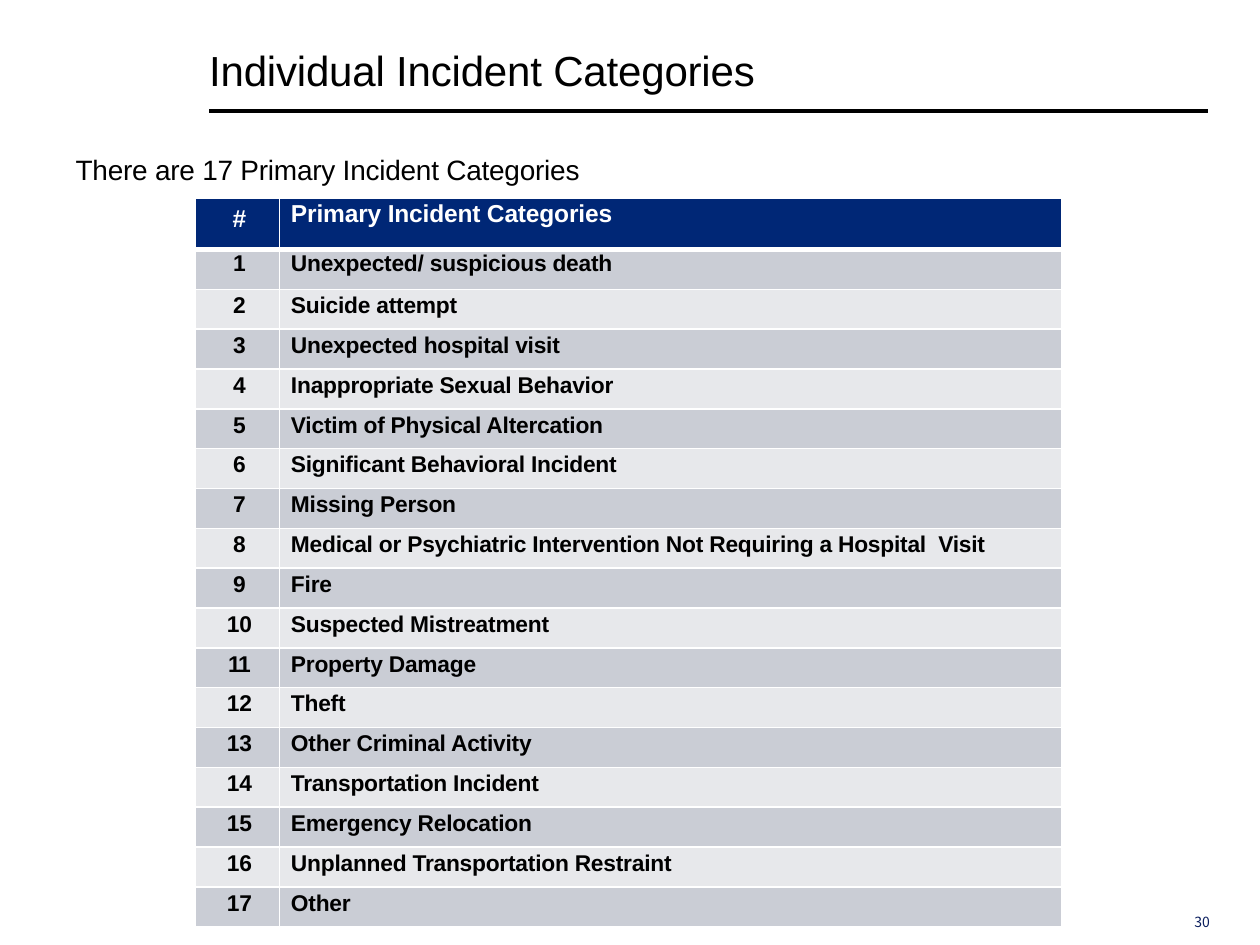
import pptx
import pptx.dml.color
import pptx.enum.text
import pptx.oxml
import pptx.oxml.ns
import pptx.util
from lxml import etree
from pptx.util import Inches

ALIGN = pptx.enum.text.PP_ALIGN
ANCHOR = pptx.enum.text.MSO_ANCHOR
BLACK, WHITE, NAVY = "000000", "FFFFFF", "002776"
BANDS = ["CACDD5", "E7E8EB"]

CATEGORIES = [
    "Unexpected/ suspicious death",
    "Suicide attempt",
    "Unexpected hospital visit",
    "Inappropriate Sexual Behavior",
    "Victim of Physical Altercation",
    "Significant Behavioral Incident",
    "Missing Person",
    "Medical or Psychiatric Intervention Not Requiring a Hospital  Visit",
    "Fire",
    "Suspected Mistreatment",
    "Property Damage",
    "Theft",
    "Other Criminal Activity",
    "Transportation Incident",
    "Emergency Relocation",
    "Unplanned Transportation Restraint",
    "Other",
]


def color(hex_value):
    return pptx.dml.color.RGBColor.from_string(hex_value)


def write(frame, text, size, hex_value, font="Arial", bold=False,
          align=ALIGN.LEFT, spacing=0):
    """Fill a text frame; spacing is in points between letters."""
    paragraph = frame.paragraphs[0]
    run = paragraph.add_run()
    run.text = text
    paragraph.alignment = align
    paragraph.font.size = pptx.util.Pt(size)
    paragraph.font.name = font
    paragraph.font.bold = bold
    paragraph.font.color.rgb = color(hex_value)
    if spacing:
        run.font._element.set("spc", str(round(spacing * 100)))
    return paragraph


def clear_margins(frame, left=0):
    frame.margin_left = Inches(left)
    frame.margin_top = frame.margin_right = frame.margin_bottom = 0
    frame.vertical_anchor = ANCHOR.TOP
    frame.word_wrap = True
    frame.auto_size = pptx.enum.text.MSO_AUTO_SIZE.NONE


def add_label(slide, left, top, width, height, indent=0.01):
    label = slide.shapes.add_textbox(
        Inches(left), Inches(top), Inches(width), Inches(height))
    clear_margins(label.text_frame, indent)
    return label.text_frame


def add_heading(slide, left, top, width, height):
    # Title placeholder
    title = slide.shapes.title
    title.left, title.top = Inches(left), Inches(top)
    title.width, title.height = Inches(width), Inches(height)
    clear_margins(title.text_frame, 0.01)
    write(title.text_frame, "Individual Incident Categories", 24, BLACK,
          spacing=-0.1)

    # Rule below the title
    rule_y = Inches(0.88)
    rule = slide.shapes.add_connector(
        pptx.enum.shapes.MSO_CONNECTOR.STRAIGHT,
        Inches(1.66), rule_y, Inches(9.59), rule_y)
    rule.line.color.rgb = color(BLACK)
    rule.line.width = pptx.util.Pt(2.04)
    etree.SubElement(rule._element.spPr, pptx.oxml.ns.qn("a:effectLst"))


def set_borders(cell, top=1, bottom=1):
    """White borders, widths in points; they come before the fill."""
    widths = {"lnL": 1, "lnR": 1, "lnT": top, "lnB": bottom}
    for position, (side, width) in enumerate(widths.items()):
        border = pptx.oxml.parse_xml(
            f'<a:{side} {pptx.oxml.ns.nsdecls("a")} w="{width * 12700}">'
            f'<a:solidFill><a:srgbClr val="{WHITE}"/></a:solidFill></a:{side}>')
        cell._tc.get_or_add_tcPr().insert(position, border)


def fill_cell(cell, text, size, text_color, fill, margin_top, is_number, spacing):
    cell.margin_left = Inches(0.03 if is_number else 0.09)
    cell.margin_top = Inches(margin_top)
    cell.margin_right = cell.margin_bottom = 0
    cell.vertical_anchor = ANCHOR.TOP
    cell.fill.solid()
    cell.fill.fore_color.rgb = color(fill)
    return write(cell.text_frame, text, size, text_color, bold=True,
                 align=ALIGN.CENTER if is_number else ALIGN.LEFT,
                 spacing=spacing)


def add_category_table(slide, left, top, width, height):
    header_height, number_width = 0.41, 0.67
    table = slide.shapes.add_table(
        len(CATEGORIES) + 1, 2, Inches(left), Inches(top),
        Inches(width), Inches(height)).table
    table.horz_banding = False
    table.columns[0].width = Inches(number_width)
    table.columns[1].width = Inches(width - number_width)

    # Header row
    table.rows[0].height = Inches(header_height)
    headers = [("#", 0.06), ("Primary Incident Categories", 0.02)]
    for column, (text, margin_top) in enumerate(headers):
        cell = table.cell(0, column)
        fill_cell(cell, text, 14, WHITE, NAVY, margin_top, column == 0,
                  -0.1 * column)
        set_borders(cell, bottom=3)

    # Numbered category rows
    row_height = Inches((height - header_height) / len(CATEGORIES))
    for number, category in enumerate(CATEGORIES, start=1):
        table.rows[number].height = row_height
        first = number == 1
        number_spacing = -0.8 if number == 11 else 0
        entries = [(str(number), number_spacing), (category, -0.1)]
        for column, (text, spacing) in enumerate(entries):
            cell = table.cell(number, column)
            paragraph = fill_cell(
                cell, text, 13, BLACK, BANDS[(number - 1) % 2],
                0 if first else 0.03, column == 0, spacing)
            if first:
                paragraph.line_spacing = pptx.util.Pt(15.4)
            set_borders(cell, top=3 if first else 1)


def main():
    deck = pptx.Presentation()
    deck.slide_width, deck.slide_height = Inches(10), Inches(7.5)
    slide = deck.slides.add_slide(deck.slide_layouts.get_by_name("Title Only"))

    add_heading(slide, 1.65, 0.35, 4.39, 0.42)
    write(add_label(slide, 0.59, 1.21, 4.09, 0.28),
          "There are 17 Primary Incident Categories", 16, BLACK, spacing=-0.1)
    add_category_table(slide, 1.55, 1.57, 6.88, 5.79)

    # Page number
    page = write(add_label(slide, 9.45, 7.25, 0.17, 0.14, indent=0.03),
                 "30", 8, "091D5D", font="Noto Sans CJK JP")
    page.line_spacing = pptx.util.Pt(9.5)

    deck.save("out.pptx")


if __name__ == "__main__":
    main()
